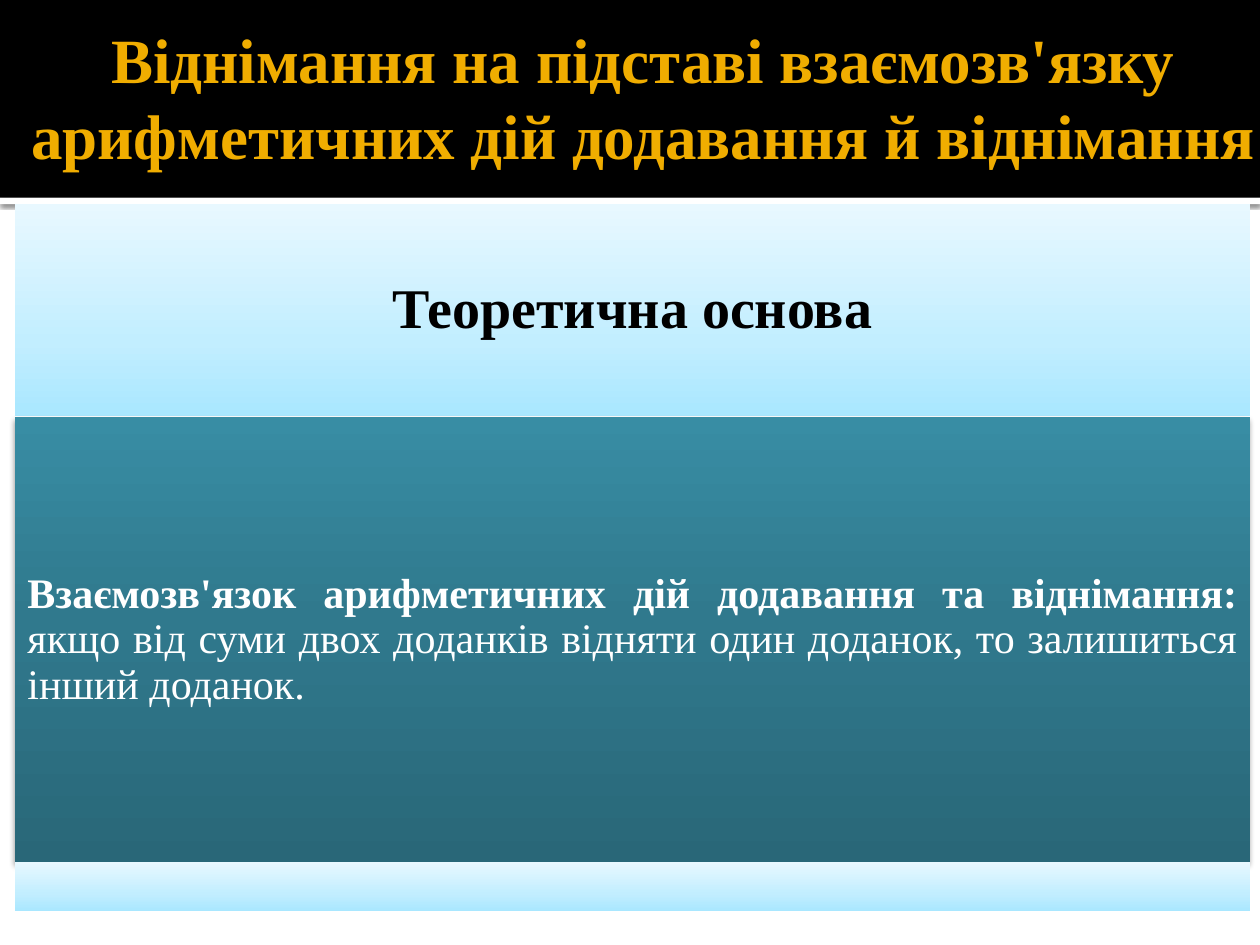
import lxml.etree
import pptx
import pptx.dml.color
import pptx.enum.shapes
import pptx.enum.text
import pptx.oxml
import pptx.oxml.ns
import pptx.util

Inches = pptx.util.Inches
Pt = pptx.util.Pt
RGBColor = pptx.dml.color.RGBColor
PP_ALIGN = pptx.enum.text.PP_ALIGN
MIDDLE = pptx.enum.text.MSO_ANCHOR.MIDDLE

BLACK = RGBColor(0x00, 0x00, 0x00)
WHITE = RGBColor(0xFF, 0xFF, 0xFF)
GOLD = RGBColor(0xF0, 0xAD, 0x00)
PALE_BLUE = [(0, RGBColor(0xA9, 0xE7, 0xFF)), (35, RGBColor(0xC2, 0xEE, 0xFF)),
             (100, RGBColor(0xE8, 0xF8, 0xFF))]
TEAL = [(0, RGBColor(0x29, 0x67, 0x78)), (55, RGBColor(0x30, 0x79, 0x8D)),
        (100, RGBColor(0x38, 0x8D, 0xA4))]
FONT = "Times New Roman"


def add_band(left, top, width, height, fill, shadow=None):
    """Add a borderless rectangle; fill is a colour or a list of gradient stops."""
    band = slide.shapes.add_shape(pptx.enum.shapes.MSO_SHAPE.RECTANGLE,
                                  Inches(left), Inches(top), Inches(width), Inches(height))
    band.line.fill.background()
    band.shadow.inherit = False
    if isinstance(fill, list):
        band.fill.gradient()
        band.fill.gradient_angle = 90
        stops = band._element.spPr.find(".//" + pptx.oxml.ns.qn("a:gsLst"))
        stops.clear()
        for position, color in fill:
            stops.append(pptx.oxml.parse_xml(
                f'<a:gs {pptx.oxml.ns.nsdecls("a")} pos="{position * 1000}">'
                f'<a:srgbClr val="{color}"/></a:gs>'))
    else:
        band.fill.solid()
        band.fill.fore_color.rgb = fill
    if shadow:
        alpha, blur, distance = shadow
        effects = band._element.spPr.find(pptx.oxml.ns.qn("a:effectLst"))
        effects.append(pptx.oxml.parse_xml(
            f'<a:outerShdw {pptx.oxml.ns.nsdecls("a")} blurRad="{Pt(blur)}" '
            f'dist="{Pt(distance)}" dir="5400000" rotWithShape="0">'
            f'<a:srgbClr val="{BLACK}"><a:alpha val="{alpha * 1000}"/></a:srgbClr>'
            '</a:outerShdw>'))
    return band


def write_text(frame, runs, size, color, align, margins, spacing=None):
    """Write one paragraph of (text, bold) runs, centred vertically."""
    left, top, right, bottom = map(Inches, margins)
    frame_format = {"word_wrap": True, "auto_size": pptx.enum.text.MSO_AUTO_SIZE.NONE,
                    "vertical_anchor": MIDDLE, "margin_left": left, "margin_top": top,
                    "margin_right": right, "margin_bottom": bottom}
    for name, value in frame_format.items():
        setattr(frame, name, value)
    paragraph = frame.paragraphs[0]
    paragraph.alignment = align
    paragraph.line_spacing = spacing
    for text, bold in runs:
        run = paragraph.add_run()
        run.text = text
        for name, value in {"name": FONT, "size": Pt(size), "bold": bold}.items():
            setattr(run.font, name, value)
        run.font.color.rgb = color


prs = pptx.Presentation()
prs.slide_width = Inches(10)
prs.slide_height = Inches(7.5)
slide = prs.slides.add_slide(prs.slide_layouts[5])

# Header background with a white rule below it
add_band(0, 1.57, 10, 0.05, WHITE, shadow=(60, 2.5, 0.8))
add_band(0, 0, 10, 1.57, BLACK)

# Title, brought in front of the header
title = slide.shapes.title
title_place = {"left": 0.08, "top": 0.08, "width": 10, "height": 1.37}
for name, value in title_place.items():
    setattr(title, name, Inches(value))
write_text(title.text_frame,
           [("Віднімання на підставі взаємозв'язку арифметичних дій додавання й віднімання", True)],
           36, GOLD, PP_ALIGN.CENTER, (0.1, 0.05, 0.05, 0.05))
slide.shapes._spTree.append(title._element)

# Theory panel: heading, rule and closing strip
heading = add_band(0.12, 1.62, 9.8, 1.68, PALE_BLUE)
write_text(heading.text_frame, [("Теоретична основа", True)],
           32, BLACK, PP_ALIGN.CENTER, [0.13] * 4, 0.9)

theory = add_band(0.12, 3.31, 9.8, 3.54, TEAL, shadow=(38, 3.1, 2))
write_text(theory.text_frame,
           [("Взаємозв'язок арифметичних дій додавання та віднімання: ", True),
            ("якщо від суми двох доданків відняти один доданок, то залишиться інший доданок.", False)],
           24, WHITE, PP_ALIGN.JUSTIFY, [0.1] * 4, 0.9)

add_band(0.12, 6.84, 9.8, 0.39, PALE_BLUE)

prs.save("out.pptx")
